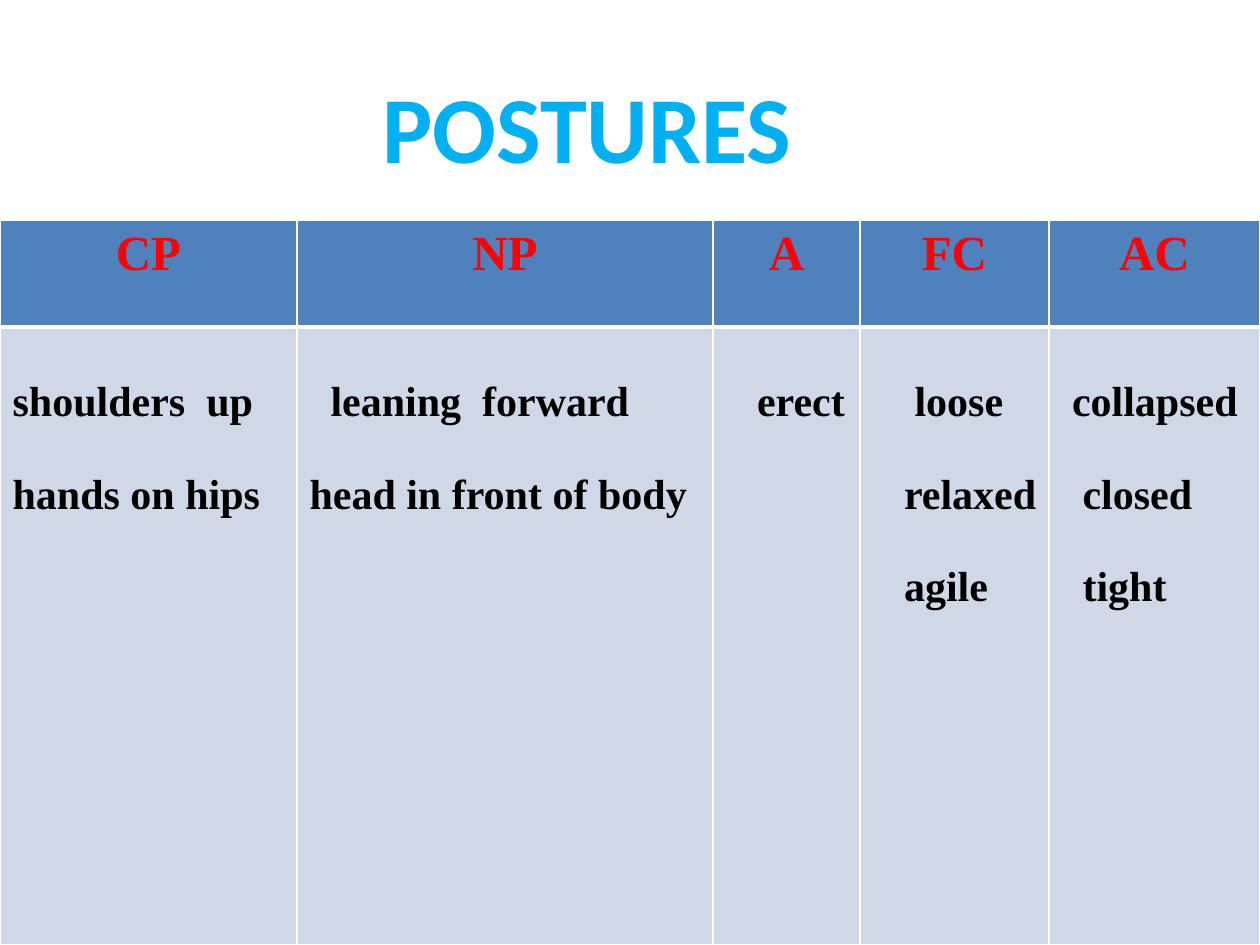
from lxml import etree
from pptx import Presentation
from pptx import util as u
from pptx.dml.color import RGBColor
from pptx.enum import text
from pptx.oxml.ns import qn

PX = u.Inches(1) / 126
HUE = {"title": "00B0F0", "head": "FF0000", "body": "000000",
       "blue": "4F81BD", "pale": "D0D8E8", "line": "FFFFFF"}


def px(n):
    return u.Emu(round(n * PX))


def style(par, face, size, hue):
    par.font.name = face
    par.font.size = u.Pt(size)
    par.font.bold = True
    par.font.color.rgb = RGBColor.from_string(HUE[hue])


deck = Presentation()
deck.slide_width, deck.slide_height = px(1260), px(945)
slide = deck.slides.add_slide(deck.slide_layouts[6])

# Columns: heading, width, lines with their indent in spaces
cols = [
    ("CP", 297, [("shoulders  up", 0), ("hands on hips", 0)]),
    ("NP", 416, [("leaning  forward", 2), ("head in front of body", 0)]),
    ("A", 147, [("erect", 3)]),
    ("FC", 189, [("loose", 4), ("relaxed", 3), ("agile", 3)]),
    ("AC", 211, [("collapsed", 1), ("closed", 2), ("tight", 2)]),
]

# Table
grid = slide.shapes.add_table(2, len(cols), 0, px(220), px(1260), px(725)).table
grid.rows[0].height, grid.rows[1].height = px(107), px(618)
for c, (name, wide, lines) in enumerate(cols):
    grid.columns[c].width = px(wide)
    head, body = grid.cell(0, c), grid.cell(1, c)

    # Borders, with a thick rule between the rows, then fills
    for cell, thick, fill in ((head, "lnB", "blue"), (body, "lnT", "pale")):
        props = cell._tc.get_or_add_tcPr()
        for side in ("lnL", "lnR", "lnT", "lnB"):
            width = u.Pt(3 if side == thick else 1)
            edge = etree.SubElement(props, qn("a:" + side), w=str(width))
            paint = etree.SubElement(edge, qn("a:solidFill"))
            etree.SubElement(paint, qn("a:srgbClr"), val=HUE["line"])
        cell.fill.solid()
        cell.fill.fore_color.rgb = RGBColor.from_string(HUE[fill])

    # Heading
    par = head.text_frame.paragraphs[0]
    par.text = name
    par.alignment = text.PP_ALIGN.CENTER
    style(par, "Times New Roman", 28, "head")

    # Postures, one line apart
    body.margin_top, body.margin_right = px(52), px(6)
    frame = body.text_frame
    frame.text = "\n".join(line for line, _ in lines)
    for par, (_, gap) in zip(frame.paragraphs, lines):
        par.space_after = u.Pt(26.5)
        par._p.get_or_add_pPr().set("marL", str(u.Pt(6 * gap)))
        style(par, "Times New Roman", 24, "body")

# Title
box = slide.shapes.add_textbox(px(368), px(63), px(438), px(127))
frame = box.text_frame
frame.word_wrap = False
frame.auto_size = text.MSO_AUTO_SIZE.SHAPE_TO_FIT_TEXT
par = frame.paragraphs[0]
par.text = "POSTURES"
par.alignment = text.PP_ALIGN.CENTER
style(par, "Calibri", 54, "title")

deck.save("out.pptx")
